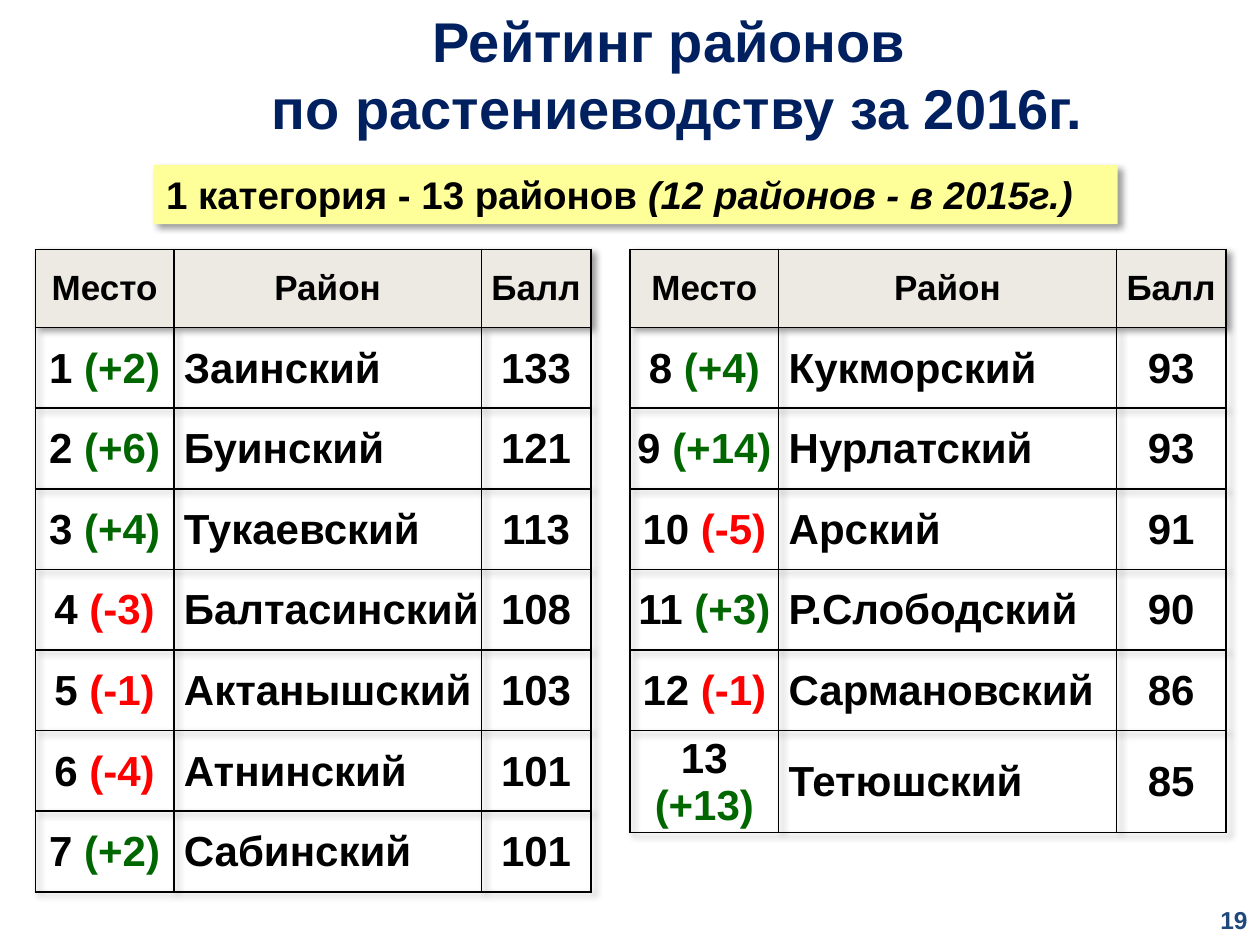
from lxml import etree
from pptx import Presentation
from pptx.dml.color import RGBColor
from pptx.enum.text import MSO_ANCHOR, MSO_AUTO_SIZE, PP_ALIGN
from pptx.oxml.ns import qn
from pptx.util import Inches, Pt

BLACK, GREEN, RED = "000000", "006600", "FF0000"
HEADERS = ["Место", "Район", "Балл"]
LEFT_ROWS = [
    ("1", "(+2)", "Заинский", "133"),
    ("2", "(+6)", "Буинский", "121"),
    ("3", "(+4)", "Тукаевский", "113"),
    ("4", "(-3)", "Балтасинский", "108"),
    ("5", "(-1)", "Актанышский", "103"),
    ("6", "(-4)", "Атнинский", "101"),
    ("7", "(+2)", "Сабинский", "101"),
]
RIGHT_ROWS = [
    ("8", "(+4)", "Кукморский", "93"),
    ("9", "(+14)", "Нурлатский", "93"),
    ("10", "(-5)", "Арский", "91"),
    ("11", "(+3)", "Р.Слободский", "90"),
    ("12", "(-1)", "Сармановский", "86"),
    ("13", "(+13)", "Тетюшский", "85"),
]
HEADER_HEIGHT, ROW_HEIGHT = 0.62, 0.64


def color(hex_string):
    """Turn a hex string into a colour."""
    return RGBColor.from_string(hex_string)


def style(paragraph, size, hex_string, align=PP_ALIGN.LEFT):
    """Give a paragraph its bold Arial font and alignment."""
    paragraph.alignment = align
    paragraph.font.name = "Arial"
    paragraph.font.size = Pt(size)
    paragraph.font.bold = True
    paragraph.font.color.rgb = color(hex_string)


def make_shadow():
    """Return an effect list with a soft shadow to the lower right."""
    effects = etree.Element(qn("a:effectLst"))
    shadow = etree.SubElement(
        effects, qn("a:outerShdw"), blurRad=str(Pt(4)), dist=str(Pt(3)),
        dir="2700000", algn="tl", rotWithShape="0")
    shadow_color = etree.SubElement(shadow, qn("a:srgbClr"), val=BLACK)
    etree.SubElement(shadow_color, qn("a:alpha"), val="40000")
    return effects


def add_title(slide, left, top, width, height):
    """Place the two-line slide title."""
    title = slide.shapes.title
    title.left, title.top = Inches(left), Inches(top)
    title.width, title.height = Inches(width), Inches(height)
    frame = title.text_frame
    frame.auto_size = MSO_AUTO_SIZE.NONE
    frame.vertical_anchor = MSO_ANCHOR.TOP
    frame.text = "Рейтинг районов \nпо растениеводству за 2016г."
    for paragraph in frame.paragraphs:
        style(paragraph, 32, "002060", PP_ALIGN.CENTER)


def add_category_banner(slide, left, top, width, height):
    """Place the yellow band that names the category."""
    banner = slide.shapes.add_textbox(
        Inches(left), Inches(top), Inches(width), Inches(height))
    banner.fill.solid()
    banner.fill.fore_color.rgb = color("FFFF99")
    banner._element.spPr.append(make_shadow())
    banner.text_frame.word_wrap = True
    paragraph = banner.text_frame.paragraphs[0]
    style(paragraph, 22, BLACK)
    paragraph.add_run().text = "1 категория - 13 районов "
    comparison = paragraph.add_run()
    comparison.text = "(12 районов - в 2015г.)"
    comparison.font.italic = True


def add_page_number(slide, left, top, width, height):
    """Place the page number in the lower right corner."""
    box = slide.shapes.add_textbox(
        Inches(left), Inches(top), Inches(width), Inches(height))
    box.text_frame.word_wrap = True
    box.text_frame.vertical_anchor = MSO_ANCHOR.MIDDLE
    box.text_frame.text = "19"
    style(box.text_frame.paragraphs[0], 14, "1F497D", PP_ALIGN.RIGHT)


def add_borders(cell):
    """Draw a thin black line on each side of a cell."""
    properties = cell._tc.get_or_add_tcPr()
    for position, side in enumerate(("a:lnL", "a:lnR", "a:lnT", "a:lnB")):
        line = etree.Element(qn(side), w=str(Pt(1)))
        fill = etree.SubElement(line, qn("a:solidFill"))
        etree.SubElement(fill, qn("a:srgbClr"), val=BLACK)
        properties.insert(position, line)


def format_cell(cell, margins):
    """Set the anchor, margins and borders of a cell."""
    cell.vertical_anchor = MSO_ANCHOR.MIDDLE
    cell.margin_left, cell.margin_top, cell.margin_right, cell.margin_bottom = map(
        Inches, margins)
    add_borders(cell)


def fill_header(cell, text):
    """Write one column heading."""
    cell.fill.solid()
    cell.fill.fore_color.rgb = color("ECEAE2")
    cell.text = text
    style(cell.text_frame.paragraphs[0], 20, BLACK, PP_ALIGN.CENTER)
    format_cell(cell, (0.07, 0, 0.07, 0))


def fill_body(cell, text, align, change=""):
    """Write one value, followed by its change in green or red."""
    cell.fill.background()
    paragraph = cell.text_frame.paragraphs[0]
    style(paragraph, 24, BLACK, align)
    paragraph.add_run().text = f"{text} " if change else text
    if change:
        run = paragraph.add_run()
        run.text = change
        run.font.color.rgb = color(GREEN if "+" in change else RED)
    left_margin = 0.08 if align == PP_ALIGN.LEFT else 0.01
    format_cell(cell, (left_margin, 0.01, 0.01, 0))


def add_rating_table(slide, left, top, column_widths, rows):
    """Place a table of districts with their ranks and scores."""
    height = HEADER_HEIGHT + ROW_HEIGHT * len(rows)
    table = slide.shapes.add_table(
        len(rows) + 1, len(HEADERS), Inches(left), Inches(top),
        Inches(sum(column_widths)), Inches(height)).table
    table.horz_banding = False
    table._tbl.tblPr.insert(0, make_shadow())
    for column, width in zip(table.columns, column_widths):
        column.width = Inches(width)
    for index, row in enumerate(table.rows):
        row.height = Inches(ROW_HEIGHT if index else HEADER_HEIGHT)
    for index, header in enumerate(HEADERS):
        fill_header(table.cell(0, index), header)
    for index, (place, change, district, score) in enumerate(rows, start=1):
        fill_body(table.cell(index, 0), place, PP_ALIGN.CENTER, change)
        fill_body(table.cell(index, 1), district, PP_ALIGN.LEFT)
        fill_body(table.cell(index, 2), score, PP_ALIGN.CENTER)


def main():
    """Build and save the presentation."""
    presentation = Presentation()
    presentation.slide_width = Inches(10)
    presentation.slide_height = Inches(7.5)
    slide = presentation.slides.add_slide(presentation.slide_layouts[5])
    add_title(slide, 0.75, 0, 9.25, 1.18)
    add_category_banner(slide, 1.22, 1.31, 7.65, 0.47)
    add_rating_table(slide, 0.28, 1.98, (1.1, 2.44, 0.87), LEFT_ROWS)
    add_rating_table(slide, 5, 1.98, (1.18, 2.68, 0.87), RIGHT_ROWS)
    add_page_number(slide, 7.67, 7.1, 2.33, 0.4)
    presentation.save("out.pptx")


if __name__ == "__main__":
    main()
